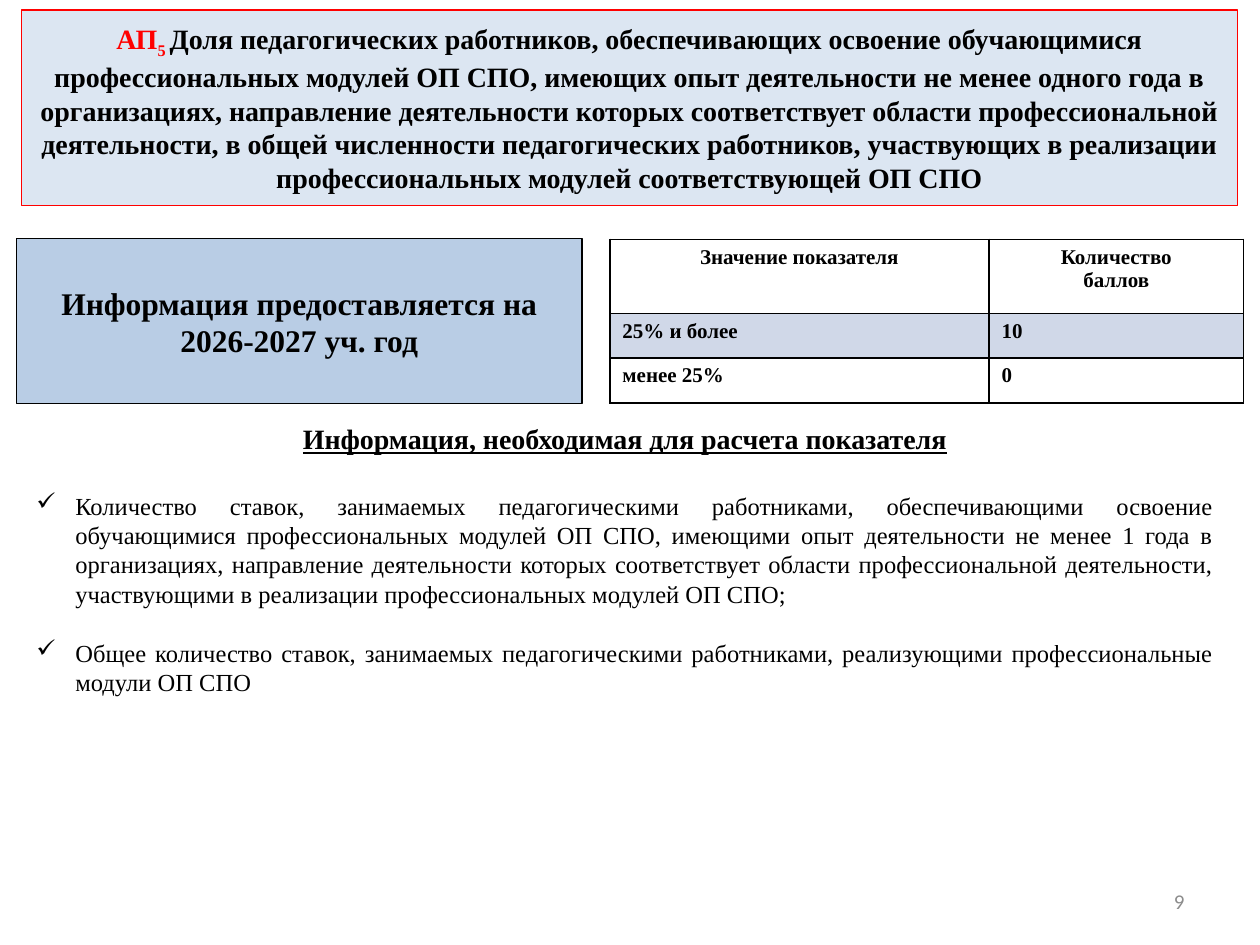
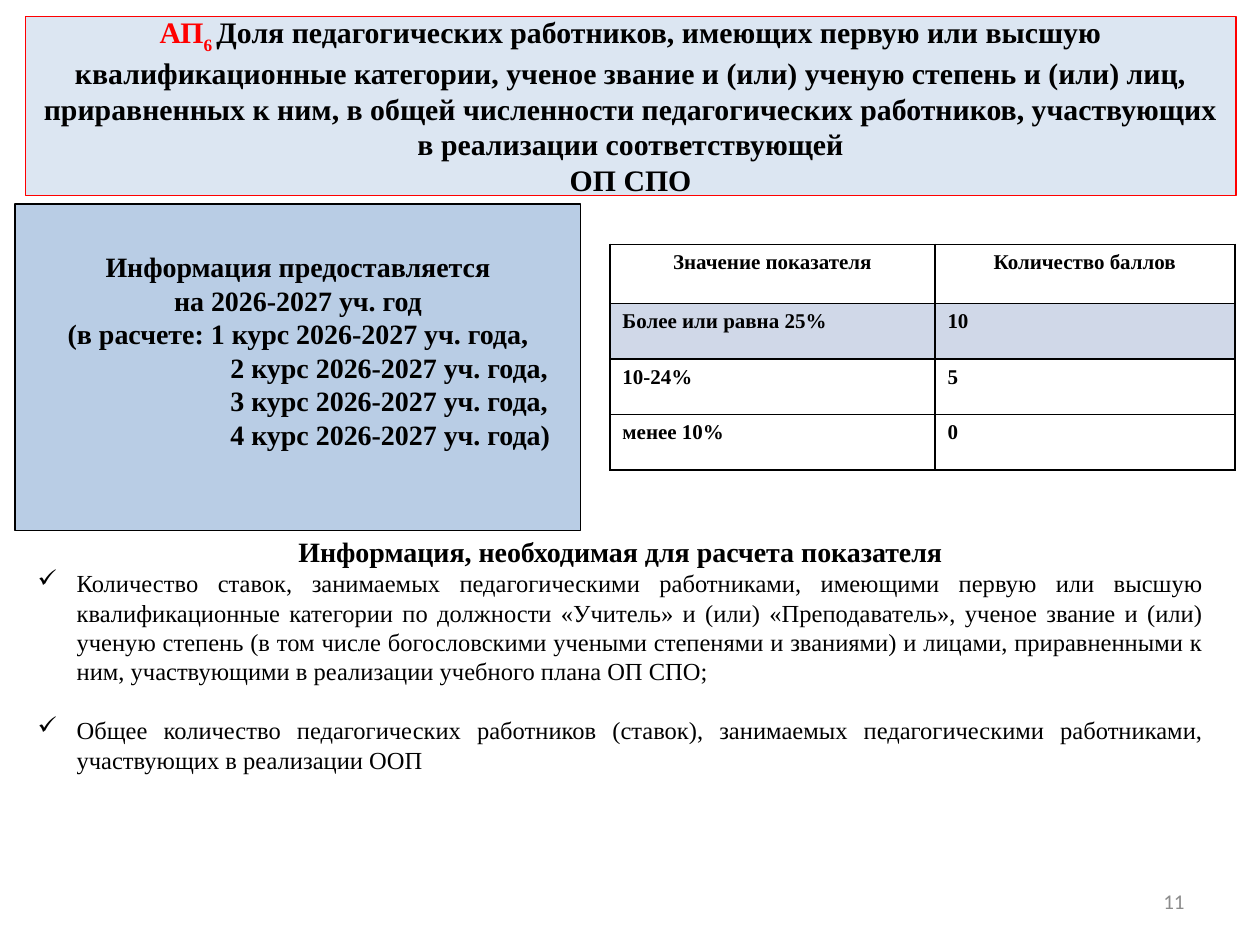
from copy import deepcopy
from dataclasses import dataclass

from lxml.etree import SubElement
from pptx import Presentation
from pptx.dml.color import RGBColor
from pptx.enum.shapes import MSO_SHAPE as Preset
from pptx.enum.text import MSO_ANCHOR as Anchor, MSO_AUTO_SIZE as AutoSize, PP_ALIGN as Align
from pptx.oxml.ns import qn
from pptx.util import Emu, Inches, Pt


@dataclass(frozen=True)
class Theme:
    font: str = "Times New Roman"
    number_font: str = "Calibri"
    ink: str = "000000"
    accent: str = "FF0000"
    paper: str = "FFFFFF"
    title_fill: str = "DCE6F2"
    period_fill: str = "B9CDE5"
    band_fill: str = "D0D8E8"
    number_ink: str = "8C8C8C"
    heading_size: int = 16
    body_size: int = 14
    small_size: int = 12
    outline: float = 0.75
    border: float = 1


THEME = Theme()
WIDTH, HEIGHT = Inches(10), Inches(7.5)
COLUMNS, ROWS = 100, 75


def across(columns: float) -> Emu:
    return Emu(round(WIDTH * columns / COLUMNS))


def down(rows: float) -> Emu:
    return Emu(round(HEIGHT * rows / ROWS))


@dataclass(frozen=True)
class Area:
    column: float
    row: float
    columns: float
    rows: float

    def box(self) -> tuple:
        return across(self.column), down(self.row), across(self.columns), down(self.rows)


@dataclass(frozen=True)
class Line:
    text: str
    indent: float = 0


@dataclass(frozen=True)
class Indicator:
    number: str
    index: str
    title: str
    title_area: Area
    title_size: int
    period: list[Line]
    period_area: Area
    period_size: int
    scores: list[tuple[str, str]]
    score_corner: tuple[float, float]
    score_columns: tuple[float, float]
    score_rows: tuple[float, ...]
    inputs: list[str]
    inputs_area: Area
    inputs_gap: float
    heading_underline: bool
    heading_spacing: float


NUMBER_AREA = Area(71.7, 69.5, 23.3, 4)
INPUTS_HEADING = "Информация, необходимая для расчета показателя"
INPUT_GAP = 16.8
BULLET_INDENT = 3.1
PERIOD_INSET = 3.6
COURSE_INDENT = 16.1

INDICATORS = [
    Indicator(
        number="9",
        index="5",
        title="Доля педагогических работников, обеспечивающих освоение обучающимися "
        "профессиональных модулей ОП СПО, имеющих опыт деятельности не менее одного года в "
        "организациях, направление деятельности которых соответствует области профессиональной "
        "деятельности, в общей численности педагогических работников, участвующих в реализации "
        "профессиональных модулей соответствующей ОП СПО",
        title_area=Area(1.7, 0.8, 96.5, 15.5),
        title_size=16,
        period=[Line("Информация предоставляется на 2026-2027 уч. год")],
        period_area=Area(1.3, 18.9, 44.9, 13.1),
        period_size=18,
        scores=[
            ("Значение показателя", "Количество\nбаллов"),
            ("25% и более", "10"),
            ("менее 25%", "0"),
        ],
        score_corner=(48.4, 19),
        score_columns=(30.1, 20.2),
        score_rows=(5.9, 3.5, 3.6),
        inputs=[
            "Количество ставок, занимаемых педагогическими работниками, обеспечивающими освоение "
            "обучающимися профессиональных модулей ОП СПО, имеющими опыт деятельности не менее "
            "1 года в организациях, направление деятельности которых соответствует области "
            "профессиональной деятельности, участвующими в реализации профессиональных модулей "
            "ОП СПО;",
            "Общее количество ставок, занимаемых педагогическими работниками, реализующими "
            "профессиональные модули ОП СПО",
        ],
        inputs_area=Area(1.9, 33, 95.4, 22),
        inputs_gap=20,
        heading_underline=True,
        heading_spacing=1,
    ),
    Indicator(
        number="11",
        index="6",
        title="Доля педагогических работников, имеющих первую или высшую квалификационные "
        "категории, ученое звание и (или) ученую степень и (или) лиц, приравненных к ним, в общей "
        "численности педагогических работников, участвующих в реализации соответствующей\nОП СПО",
        title_area=Area(2, 1.3, 96.1, 14.2),
        title_size=17,
        period=[
            Line("Информация предоставляется"),
            Line("на 2026-2027 уч. год"),
            Line("(в расчете: 1 курс 2026-2027 уч. года,"),
            Line("2 курс 2026-2027 уч. года,", COURSE_INDENT),
            Line("3 курс 2026-2027 уч. года,", COURSE_INDENT),
            Line("4 курс 2026-2027 уч. года)", COURSE_INDENT),
        ],
        period_area=Area(1.2, 16.2, 44.9, 25.9),
        period_size=16,
        scores=[
            ("Значение показателя", "Количество баллов"),
            ("Более или равна 25%", "10"),
            ("10-24%", "5"),
            ("менее 10%", "0"),
        ],
        score_corner=(48.4, 19.4),
        score_columns=(25.8, 23.8),
        score_rows=(4.7, 4.4, 4.4, 4.4),
        inputs=[
            "Количество ставок, занимаемых педагогическими работниками, имеющими первую или "
            "высшую квалификационные категории по должности «Учитель» и (или) «Преподаватель», "
            "ученое звание и (или) ученую степень (в том числе богословскими учеными степенями и "
            "званиями) и лицами, приравненными к ним, участвующими в реализации учебного плана "
            "ОП СПО;",
            "Общее количество педагогических работников (ставок), занимаемых педагогическими "
            "работниками, участвующих в реализации ООП",
        ],
        inputs_area=Area(2, 40.6, 94.5, 24.2),
        inputs_gap=0,
        heading_underline=False,
        heading_spacing=1.5,
    ),
]


def rgb(color: str) -> RGBColor:
    return RGBColor.from_string(color)


def write(paragraph, text: str, *, size: float, color: str = THEME.ink, bold: bool = True,
          font: str = THEME.font, underline: bool = False, baseline: int = 0,
          align: Align = Align.CENTER) -> None:
    paragraph.alignment = align
    for position, part in enumerate(text.split("\n")):
        if position:
            paragraph.add_line_break()
            paragraph._p[-1].append(deepcopy(run._r.rPr))
        run = paragraph.add_run()
        run.text = part
        run.font.name, run.font.size = font, Pt(size)
        run.font.bold, run.font.underline = bold, underline
        run.font.color.rgb = rgb(color)
        if baseline:
            run._r.get_or_add_rPr().set("baseline", str(baseline * 1000))


def next_paragraph(frame, position: int):
    return frame.add_paragraph() if position else frame.paragraphs[0]


def indent(paragraph, left: float, first: float = 0):
    properties = paragraph._p.get_or_add_pPr()
    properties.set("marL", str(across(left)))
    properties.set("indent", str(across(first)))
    return properties


def paint(shape, fill: str, outline: str) -> None:
    shape.fill.solid()
    shape.fill.fore_color.rgb = rgb(fill)
    shape.line.color.rgb = rgb(outline)
    shape.line.width = Pt(THEME.outline)


def add_text_area(slide, area: Area, anchor: Anchor = Anchor.TOP):
    frame = slide.shapes.add_textbox(*area.box()).text_frame
    frame.word_wrap = True
    frame.vertical_anchor = anchor
    return frame


def add_title(slide, item: Indicator) -> None:
    title = slide.shapes.title
    title.left, title.top, title.width, title.height = item.title_area.box()
    paint(title, THEME.title_fill, THEME.accent)
    frame = title.text_frame
    frame.auto_size, frame.vertical_anchor = AutoSize.NONE, Anchor.MIDDLE
    paragraph = frame.paragraphs[0]
    write(paragraph, "АП", size=item.title_size, color=THEME.accent)
    write(paragraph, f"{item.index} ", size=item.title_size, color=THEME.accent, baseline=-25)
    write(paragraph, item.title, size=item.title_size)


def add_period(slide, item: Indicator) -> None:
    panel = slide.shapes.add_shape(Preset.RECTANGLE, *item.period_area.box())
    panel.shadow.inherit = False
    paint(panel, THEME.period_fill, THEME.ink)
    frame = panel.text_frame
    frame.word_wrap, frame.vertical_anchor = True, Anchor.TOP
    frame.margin_top = down(PERIOD_INSET)
    for position, line in enumerate(item.period):
        paragraph = next_paragraph(frame, position)
        if line.indent:
            indent(paragraph, line.indent)
        write(paragraph, line.text, size=item.period_size,
              align=Align.LEFT if line.indent else Align.CENTER)


def add_borders(cell) -> None:
    properties = cell._tc.get_or_add_tcPr()
    for side in ("lnL", "lnR", "lnT", "lnB"):
        edge = SubElement(properties, qn(f"a:{side}"), w=str(Pt(THEME.border)))
        SubElement(SubElement(edge, qn("a:solidFill")), qn("a:srgbClr"), val=THEME.ink)


def add_scores(slide, item: Indicator) -> None:
    area = Area(*item.score_corner, sum(item.score_columns), sum(item.score_rows))
    table = slide.shapes.add_table(len(item.scores), 2, *area.box()).table
    table.first_row = table.horz_banding = False
    for column, width in zip(table.columns, item.score_columns):
        column.width = across(width)
    for row, height in zip(table.rows, item.score_rows):
        row.height = down(height)
    for row, values in enumerate(item.scores):
        for column, value in enumerate(values):
            cell = table.cell(row, column)
            add_borders(cell)
            cell.fill.solid()
            cell.fill.fore_color.rgb = rgb(THEME.band_fill if row == 1 else THEME.paper)
            for position, text in enumerate(value.split("\n")):
                write(next_paragraph(cell.text_frame, position), text, size=THEME.small_size,
                      align=Align.LEFT if row else Align.CENTER)


def add_inputs(slide, item: Indicator) -> None:
    frame = add_text_area(slide, item.inputs_area)
    heading = frame.paragraphs[0]
    heading.line_spacing = item.heading_spacing
    write(heading, INPUTS_HEADING, size=THEME.heading_size, underline=item.heading_underline)
    for position, text in enumerate(item.inputs):
        paragraph = frame.add_paragraph()
        properties = indent(paragraph, BULLET_INDENT, -BULLET_INDENT)
        SubElement(properties, qn("a:buChar"), char="✓")
        paragraph.space_before = Pt(INPUT_GAP if position else item.inputs_gap)
        write(paragraph, text, size=THEME.body_size, bold=False, align=Align.JUSTIFY)


def add_number(slide, number: str) -> None:
    frame = add_text_area(slide, NUMBER_AREA, Anchor.MIDDLE)
    write(frame.paragraphs[0], number, size=THEME.small_size, color=THEME.number_ink,
          bold=False, font=THEME.number_font, align=Align.RIGHT)


def main() -> None:
    deck = Presentation()
    deck.slide_width, deck.slide_height = WIDTH, HEIGHT
    title_only = deck.slide_layouts.get_by_name("Title Only")
    for item in INDICATORS:
        slide = deck.slides.add_slide(title_only)
        add_number(slide, item.number)
        add_scores(slide, item)
        add_period(slide, item)
        add_inputs(slide, item)
        add_title(slide, item)
    deck.save("out.pptx")


if __name__ == "__main__":
    main()
